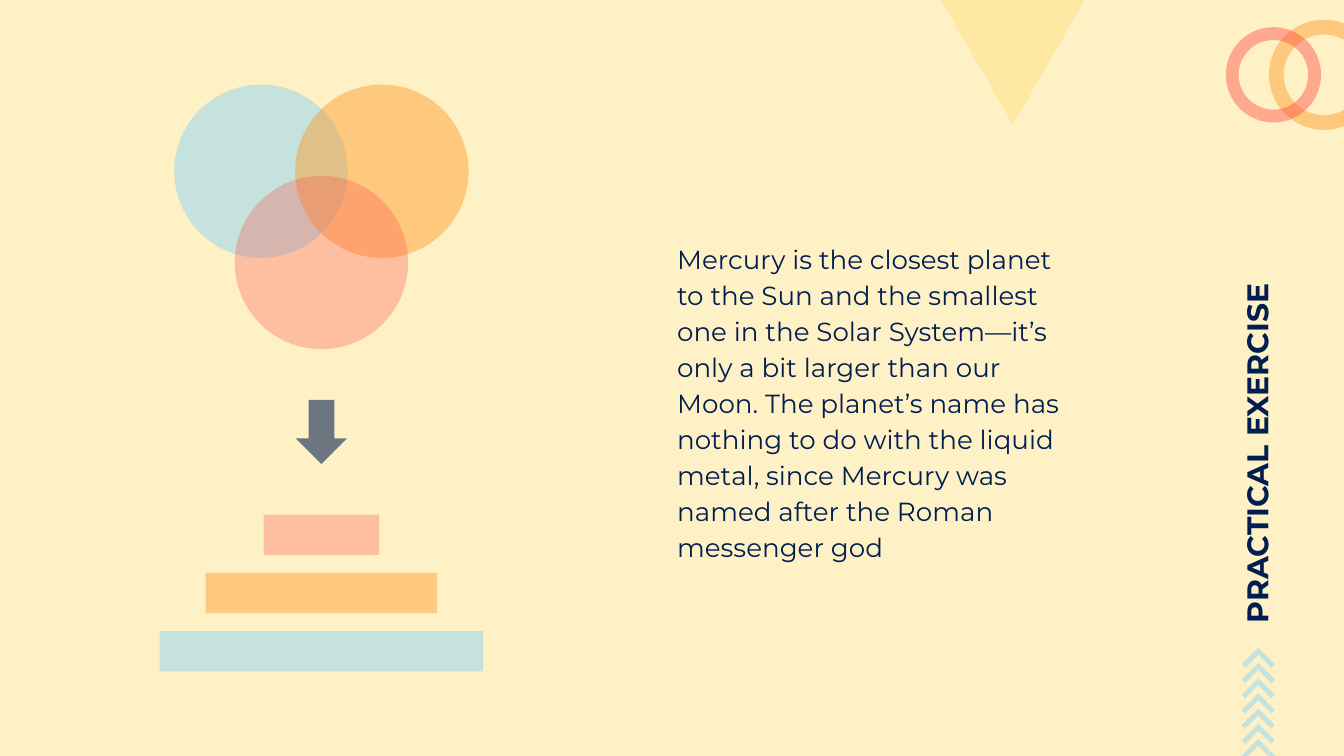
from dataclasses import dataclass

from lxml.etree import SubElement
from pptx import Presentation
from pptx.dml.color import RGBColor
from pptx.dml.fill import FillFormat
from pptx.enum.shapes import MSO_SHAPE
from pptx.enum.text import MSO_ANCHOR
from pptx.oxml.ns import qn
from pptx.shapes.autoshape import Shape
from pptx.slide import Slide
from pptx.util import Pt

BACKGROUND, YELLOW, NAVY = "FFF1C6", "FFD966", "011E50"
BLUE, ORANGE, RED = "99D7EF", "FE9B2B", "FE524D"
FIGURE_CENTER = 172.2
CHEVRON_CENTER, CHEVRON_TOP, CHEVRON_PITCH, CHEVRON_COUNT = 674.1, 347, 8.15, 7
CHEVRON_OUTLINE = [(0, 0), (-8.9, 8.9), (-7, 10.8), (0, 3.7), (7, 10.8), (8.9, 8.9)]


@dataclass
class Figure:
    kind: MSO_SHAPE
    center: float
    top: float
    width: float
    height: float
    color: str
    opacity: int
    adjustments: tuple[float, ...] = ()
    rotation: float = 0


def circle(offset: float, top: float, color: str, opacity: int) -> Figure:
    return Figure(MSO_SHAPE.OVAL, FIGURE_CENTER + offset, top, 92.9, 92.9, color, opacity)


def bar(index: int, width: float, color: str, opacity: int) -> Figure:
    top = 275.7 + 31.2 * index
    return Figure(MSO_SHAPE.RECTANGLE, FIGURE_CENTER, top, width, 21.6, color, opacity)


def ring(center: float, top: float, size: float, color: str, opacity: int) -> Figure:
    return Figure(MSO_SHAPE.DONUT, center, top, size, size, color, opacity, (0.134,))


DECORATIONS = [
    Figure(MSO_SHAPE.ISOSCELES_TRIANGLE, 542.6, -45.4, 129.6, 112, YELLOW, 37, (0.5,), 180),
    ring(709.3, 10.6, 59, ORANGE, 47),
    ring(682.2, 14.6, 51, RED, 46),
]
DIAGRAM = [
    circle(-32.4, 45.3, BLUE, 56),
    circle(32.4, 45.3, ORANGE, 47),
    circle(0, 94.2, RED, 31),
    Figure(MSO_SHAPE.DOWN_ARROW, FIGURE_CENTER, 214.2, 27.4, 34.4, NAVY, 58, (0.5, 0.5)),
    bar(0, 62, RED, 31),
    bar(1, 124, ORANGE, 47),
    bar(2, 173.4, BLUE, 56),
]


def set_color(fill: FillFormat, color: str) -> None:
    fill.solid()
    fill.fore_color.rgb = RGBColor.from_string(color)


def style_shape(shape: Shape, color: str, opacity: int) -> None:
    shape.shadow.inherit = False
    shape.line.fill.background()
    set_color(shape.fill, color)
    color_element = shape.element.spPr.find(qn("a:solidFill"))[0]
    SubElement(color_element, qn("a:alpha"), val=str(opacity * 1000))


def draw_figure(slide: Slide, figure: Figure) -> None:
    shape = slide.shapes.add_shape(
        figure.kind,
        Pt(figure.center - figure.width / 2),
        Pt(figure.top),
        Pt(figure.width),
        Pt(figure.height),
    )
    for index, value in enumerate(figure.adjustments):
        shape.adjustments[index] = value
    shape.rotation = figure.rotation
    style_shape(shape, figure.color, figure.opacity)


def draw_chevron(slide: Slide, top: float) -> None:
    points = [(Pt(CHEVRON_CENTER + x), Pt(top + y)) for x, y in CHEVRON_OUTLINE]
    builder = slide.shapes.build_freeform(*points[0])
    builder.add_line_segments(points[1:], close=True)
    style_shape(builder.convert_to_shape(), BLUE, 56)


def write_text(
    slide: Slide,
    text: str,
    *,
    left: float,
    top: float,
    width: float,
    height: float,
    size: float,
    bold: bool = False,
    rotation: float = 0,
    line_spacing: float = 1,
    space_after: float = 0,
    anchor: MSO_ANCHOR = MSO_ANCHOR.TOP,
) -> None:
    shape = slide.shapes.add_textbox(Pt(left), Pt(top), Pt(width), Pt(height))
    shape.rotation = rotation
    frame = shape.text_frame
    frame.word_wrap = True
    frame.vertical_anchor = anchor
    frame.margin_left = frame.margin_right = Pt(7.2)
    frame.margin_top = frame.margin_bottom = Pt(7.2)
    paragraph = frame.paragraphs[0]
    paragraph.line_spacing = line_spacing
    paragraph.space_after = Pt(space_after)
    run = paragraph.add_run()
    run.text = text
    run.font.name = "Montserrat"
    run.font.size = Pt(size)
    run.font.bold = bold
    set_color(run.font.fill, NAVY)


def main() -> None:
    """Build the practical exercise slide."""
    presentation = Presentation()
    presentation.slide_width, presentation.slide_height = Pt(720), Pt(405)
    slide = presentation.slides.add_slide(presentation.slide_layouts[6])
    set_color(slide.background.fill, BACKGROUND)
    for index in range(CHEVRON_COUNT):
        draw_chevron(slide, CHEVRON_TOP + CHEVRON_PITCH * index)
    for figure in DECORATIONS:
        draw_figure(slide, figure)
    write_text(
        slide,
        "Mercury is the closest planet to the Sun and the smallest one in the Solar "
        "System—it’s only a bit larger than our Moon. The planet’s name has nothing to do "
        "with the liquid metal, since Mercury was named after the Roman messenger god",
        left=355.7, top=89.3, width=221, height=250.6, size=14,
        line_spacing=1.15, space_after=16, anchor=MSO_ANCHOR.MIDDLE,
    )
    write_text(
        slide, "PRACTICAL EXERCISE",
        left=396, top=45.4, width=555.8, height=35.3, size=16, bold=True, rotation=270,
    )
    for figure in DIAGRAM:
        draw_figure(slide, figure)
    presentation.save("out.pptx")


if __name__ == "__main__":
    main()
